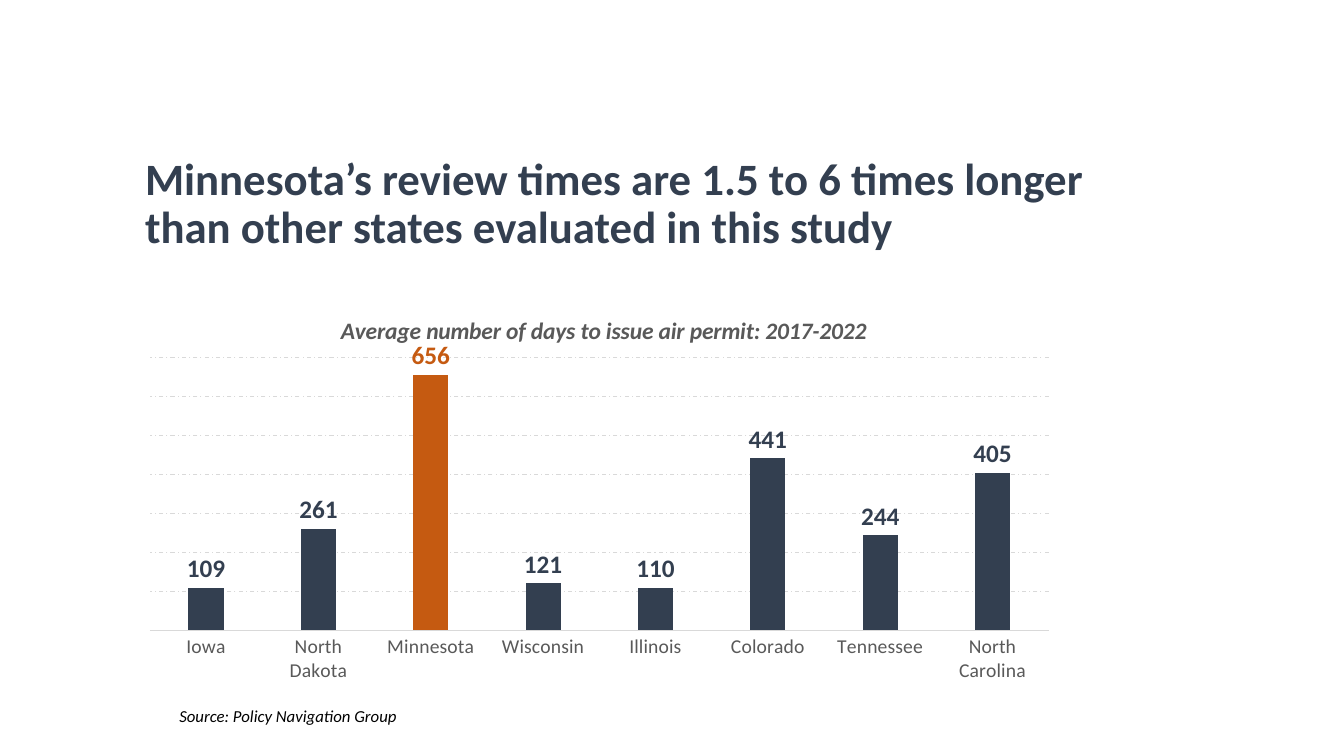
"""Build a slide comparing average air permit review times across states."""
from dataclasses import dataclass
from typing import Any

import pptx
import pptx.chart.chart
import pptx.chart.data
import pptx.dml.color
import pptx.enum.chart
import pptx.enum.dml
import pptx.enum.text
import pptx.oxml
import pptx.oxml.ns
import pptx.slide
import pptx.util

Inches = pptx.util.Inches
COLORS = {"navy": "333F50", "orange": "C55A11", "gray": "595959", "rule": "D9D9D9", "black": "000000"}
FONT = "Calibri"
HIGHLIGHT = "Minnesota"
REVIEW_DAYS = {
    "Iowa": 109,
    "North Dakota": 261,
    HIGHLIGHT: 656,
    "Wisconsin": 121,
    "Illinois": 110,
    "Colorado": 441,
    "Tennessee": 244,
    "North Carolina": 405,
}


@dataclass(frozen=True)
class TextBlock:
    text: str
    box: tuple[float, float, float, float]
    size: float
    color: str
    bold: bool = False
    italic: bool = False
    line_spacing: float = 1.0
    anchor: Any = pptx.enum.text.MSO_ANCHOR.TOP


TEXT_BLOCKS = [
    TextBlock(
        "Minnesota’s review times are 1.5 to 6 times longer than other states evaluated in this study",
        (1.34, 1.4, 10.17, 1.27), 32, "navy", bold=True, line_spacing=0.9,
        anchor=pptx.enum.text.MSO_ANCHOR.MIDDLE,
    ),
    TextBlock("Source: Policy Navigation Group", (1.68, 6.95, 6.73, 0.3), 12, "black", italic=True),
]


def rgb(name: str) -> pptx.dml.color.RGBColor:
    return pptx.dml.color.RGBColor.from_string(COLORS[name])


def set_attributes(target: Any, values: dict[str, Any]) -> None:
    for name, value in values.items():
        setattr(target, name, value)


def style_font(font: Any, size: float, color: str, bold: bool = False, italic: bool = False) -> None:
    set_attributes(font, {"name": FONT, "size": pptx.util.Pt(size), "bold": bold, "italic": italic})
    font.color.rgb = rgb(color)


def style_line(line: Any) -> None:
    line.color.rgb = rgb("rule")
    line.width = pptx.util.Pt(0.75)


def paint(fill: Any, color: str) -> None:
    fill.solid()
    fill.fore_color.rgb = rgb(color)


def add_text(slide: pptx.slide.Slide, block: TextBlock) -> None:
    frame = slide.shapes.add_textbox(*map(Inches, block.box)).text_frame
    set_attributes(frame, {"word_wrap": True, "vertical_anchor": block.anchor})
    paragraph = frame.paragraphs[0]
    paragraph.line_spacing = block.line_spacing
    run = paragraph.add_run()
    run.text = block.text
    style_font(run.font, block.size, block.color, block.bold, block.italic)


def set_layout(parent: Any, index: int, values: dict[str, Any]) -> None:
    for layout in parent.findall(pptx.oxml.ns.qn("c:layout")):
        parent.remove(layout)
    entries = "".join(f'<c:{name} val="{value}"/>' for name, value in values.items())
    namespace = pptx.oxml.ns.nsdecls("c")
    parent.insert(index, pptx.oxml.parse_xml(
        f"<c:layout {namespace}><c:manualLayout>{entries}</c:manualLayout></c:layout>"
    ))


def style_chart_title(chart: pptx.chart.chart.Chart) -> None:
    chart.has_title = True
    paragraph = chart.chart_title.text_frame.paragraphs[0]
    run = paragraph.add_run()
    run.text = "Average number of days to issue air permit: 2017-2022"
    style_font(run.font, 16.8, "gray", bold=True, italic=True)
    title = chart.element.find(".//" + pptx.oxml.ns.qn("c:title"))
    set_layout(title, 1, {"xMode": "edge", "yMode": "edge", "x": 0.217, "y": 0.045})


def style_axes(chart: pptx.chart.chart.Chart) -> None:
    tick_none = pptx.enum.chart.XL_TICK_MARK.NONE
    category_axis = chart.category_axis
    set_attributes(category_axis, {"major_tick_mark": tick_none, "has_major_gridlines": False})
    style_font(category_axis.tick_labels.font, 14, "gray")
    style_line(category_axis.format.line)
    value_axis = chart.value_axis
    set_attributes(value_axis, {
        "minimum_scale": 0, "maximum_scale": 700, "major_unit": 100,
        "has_major_gridlines": True, "visible": False,
    })
    gridline = value_axis.major_gridlines.format.line
    style_line(gridline)
    gridline.dash_style = pptx.enum.dml.MSO_LINE.DASH_DOT


def style_columns(chart: pptx.chart.chart.Chart) -> None:
    outside = pptx.enum.chart.XL_LABEL_POSITION.OUTSIDE_END
    plot = chart.plots[0]
    set_attributes(plot, {"gap_width": 219, "overlap": -27, "vary_by_categories": False})
    series = plot.series[0]
    paint(series.format.fill, "navy")
    set_attributes(series.data_labels, {"show_value": True, "position": outside})
    style_font(series.data_labels.font, 18, "navy", bold=True)
    point = series.points[list(REVIEW_DAYS).index(HIGHLIGHT)]
    paint(point.format.fill, "orange")
    style_font(point.data_label.font, 18, "orange", bold=True)
    point.data_label.position = outside


def add_review_chart(slide: pptx.slide.Slide) -> None:
    data = pptx.chart.data.CategoryChartData()
    data.categories = list(REVIEW_DAYS)
    data.add_series("Series 1", list(REVIEW_DAYS.values()))
    chart = slide.shapes.add_chart(
        pptx.enum.chart.XL_CHART_TYPE.COLUMN_CLUSTERED,
        *map(Inches, (1.34, 2.9, 9.21, 3.92)), data,
    ).chart
    chart.has_legend = False
    style_font(chart.font, 14, "black")
    style_chart_title(chart)
    style_axes(chart)
    style_columns(chart)
    plot_area = chart.element.find(".//" + pptx.oxml.ns.qn("c:plotArea"))
    set_layout(plot_area, 0, {
        "layoutTarget": "inner", "xMode": "edge", "yMode": "edge",
        "x": 0.016, "y": 0.165, "w": 0.968, "h": 0.691,
    })


def main() -> None:
    presentation = pptx.Presentation()
    set_attributes(presentation, {"slide_width": Inches(13.33), "slide_height": Inches(7.5)})
    slide = presentation.slides.add_slide(presentation.slide_layouts[6])
    for block in TEXT_BLOCKS:
        add_text(slide, block)
    add_review_chart(slide)
    presentation.save("out.pptx")


if __name__ == "__main__":
    main()
